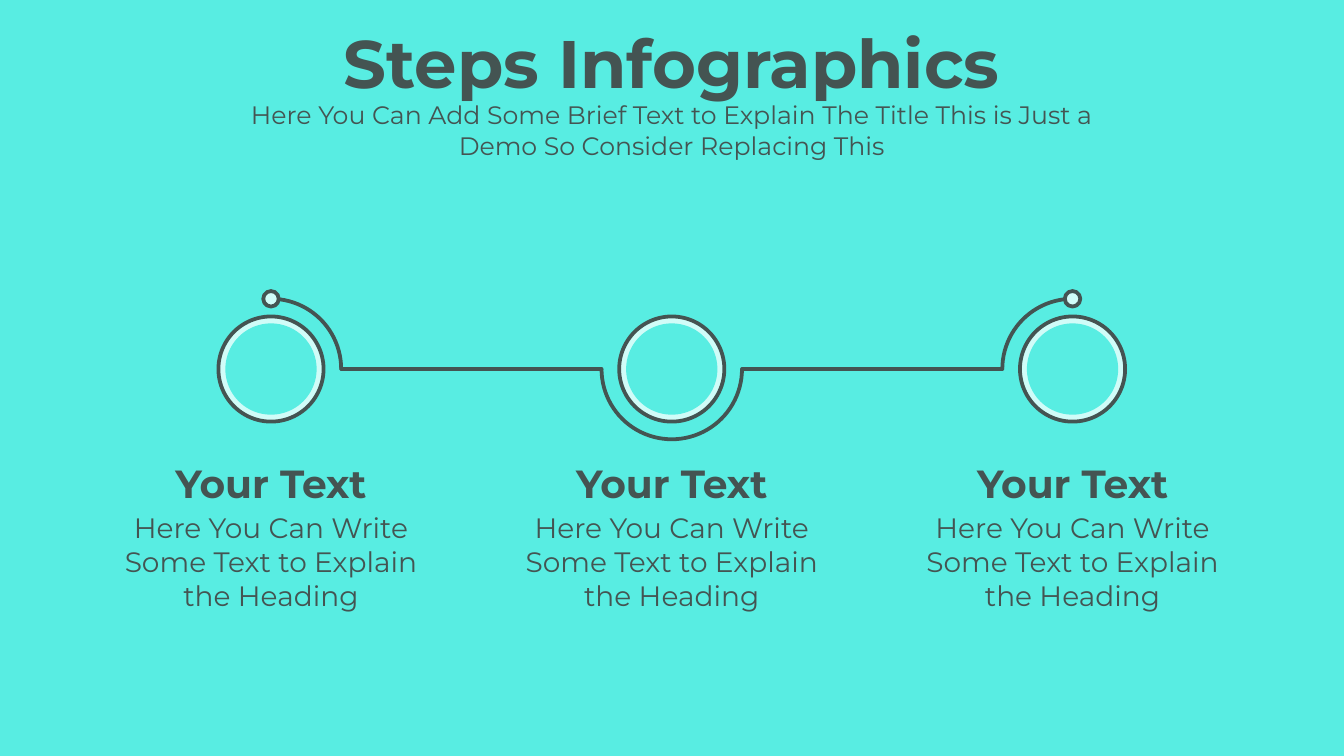
from lxml import etree
from pptx import Presentation
from pptx import util as u
from pptx.dml import color
from pptx.enum import shapes, text
from pptx.oxml import ns

FONT = "Montserrat"
INK, PALE, AQUA = "445452", "D0FCF8", "58EDE2"
MID, PITCH, AXIS = 16.93, 10.1, 9.3
BEND, RING, CORE, DOT = 1.77, 2.65, 2.3, 0.39
STROKE = 2.7
ARCS = [(270, 0), (0, 180), (180, 270)]
BODY = "Here You Can Write\nSome Text to Explain\nthe Heading"


def paint(fill, tone):
    """Fill with one hex colour."""
    fill.solid()
    fill.fore_color.rgb = color.RGBColor.from_string(tone)


def ink(item):
    """Give a shape or connector the dark round-capped stroke."""
    paint(item.line.fill, INK)
    item.line.width = u.Pt(STROKE)
    item.element.spPr.find(ns.qn("a:ln")).set("cap", "rnd")


def place(item, left, top, wide, high):
    """Set position and size in centimetres."""
    item.left, item.top = u.Cm(left), u.Cm(top)
    item.width, item.height = u.Cm(wide), u.Cm(high)


def round_shape(slide, kind, x, y, size):
    """Add a shadowless square-framed shape centred on a point."""
    item = slide.shapes.add_shape(
        kind, u.Cm(x - size / 2), u.Cm(y - size / 2), u.Cm(size), u.Cm(size))
    item.shadow.inherit = False
    return item


def disc(slide, x, y, size, tone, edge=True):
    """Add a filled circle, outlined or plain."""
    item = round_shape(slide, shapes.MSO_SHAPE.OVAL, x, y, size)
    paint(item.fill, tone)
    if edge:
        ink(item)
    else:
        item.line.fill.background()


def arc(slide, x, start, end):
    """Add a clockwise arc around a step, with angles in degrees."""
    item = round_shape(slide, shapes.MSO_SHAPE.ARC, x, AXIS, 2 * BEND)
    item.adjustments[0] = start * 0.6
    item.adjustments[1] = end * 0.6
    item.fill.background()
    ink(item)


def link(slide, x):
    """Add the straight line from one step to the next."""
    item = slide.shapes.add_connector(
        shapes.MSO_CONNECTOR.STRAIGHT, u.Cm(x + BEND), u.Cm(AXIS),
        u.Cm(x + PITCH - BEND), u.Cm(AXIS))
    ink(item)
    etree.SubElement(item.element.spPr, ns.qn("a:effectLst"))


def write(item, words, size, bold=False):
    """Fill a text shape with centred paragraphs."""
    frame = item.text_frame
    frame.text = words
    frame.word_wrap = True
    frame.auto_size = text.MSO_AUTO_SIZE.SHAPE_TO_FIT_TEXT
    frame.vertical_anchor = text.MSO_ANCHOR.TOP
    for para in frame.paragraphs:
        para.alignment = text.PP_ALIGN.CENTER
        for run in para.runs:
            font = run.font
            font.name, font.size, font.bold = FONT, u.Pt(size), bold
            paint(font.fill, INK)


def label(slide, x, top, wide, high, words, size, bold=False):
    """Add a text box centred on x."""
    item = slide.shapes.add_textbox(0, 0, 0, 0)
    write(item, words, size, bold)
    place(item, x - wide / 2, top, wide, high)


def step(slide, x, start, end):
    """Add one step with its arc, ring and texts."""
    arc(slide, x, start, end)
    disc(slide, x, AXIS, RING, PALE)
    disc(slide, x, AXIS, CORE, AQUA, edge=False)
    label(slide, x, 11.46, 7, 1.45, "Your Text", 28, True)
    label(slide, x, 12.75, 8.4, 2.82, BODY, 20)


def main():
    """Build and save the slide."""
    deck = Presentation()
    deck.slide_width, deck.slide_height = u.Cm(33.87), u.Cm(19.05)
    slide = deck.slides.add_slide(deck.slide_layouts[5])
    paint(slide.background.fill, AQUA)
    title = slide.shapes.title
    write(title, "Steps Infographics", 48, True)
    place(title, MID - 9.88, 0.41, 19.76, 2.31)
    label(slide, MID, 2.39, 22.17, 1.8,
          "Here You Can Add Some Brief Text to Explain The Title "
          "This is Just a Demo So Consider Replacing This", 18)
    spots = [MID + PITCH * i for i in (-1, 0, 1)]
    for x in spots[:-1]:
        link(slide, x)
    for x, (start, end) in zip(spots, ARCS):
        step(slide, x, start, end)
    for x in (spots[0], spots[-1]):
        disc(slide, x, AXIS - BEND, DOT, PALE)
    deck.save("out.pptx")


if __name__ == "__main__":
    main()
